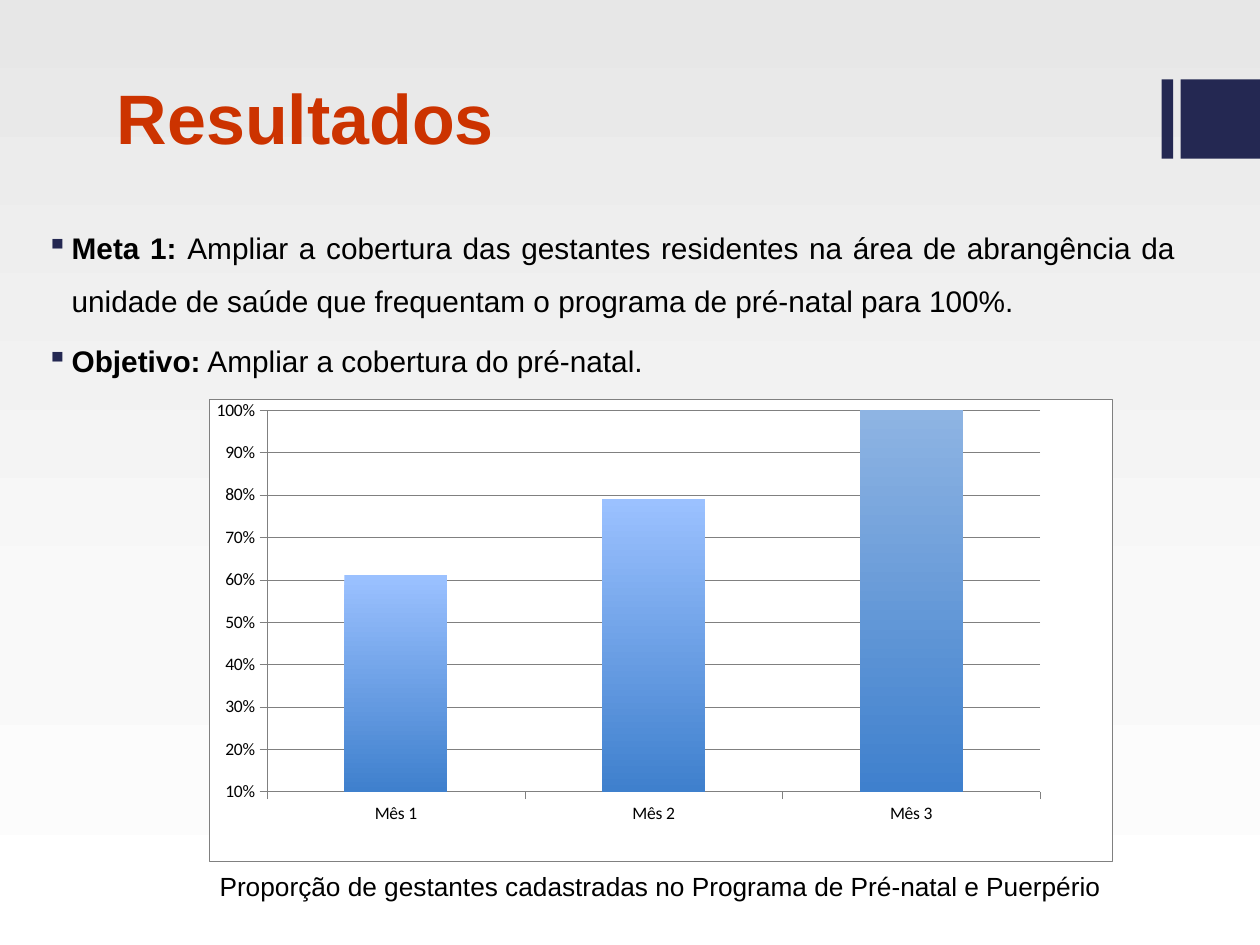
import copy
import pptx
import pptx.chart.data
import pptx.dml.color
import pptx.enum.chart
import pptx.enum.shapes
import pptx.enum.text
import pptx.oxml
import pptx.oxml.ns
import pptx.oxml.xmlchemy
import pptx.util

In, Pt = pptx.util.Inches, pptx.util.Pt
qn = pptx.oxml.ns.qn
new_element = pptx.oxml.xmlchemy.OxmlElement
ALIGN = pptx.enum.text.PP_ALIGN
ANCHOR = pptx.enum.text.MSO_ANCHOR

# Content: each paragraph is a list of (text, bold) runs
TITLE = [[("Resultados", True)]]
GOALS = [
    [("Meta 1: ", True),
     ("Ampliar a cobertura das gestantes residentes na área de abrangência da "
      "unidade de saúde que frequentam o programa de pré-natal para 100%.", False)],
    [("Objetivo:", True), (" Ampliar a cobertura do pré-natal.", False)],
]
CAPTION = [[("Proporção de gestantes cadastradas no Programa de Pré-natal e Puerpério", False)]]
COVERAGE = {"Mês 1": 0.61, "Mês 2": 0.79, "Mês 3": 1}

THEME = {
    "font": "Arial", "chart_font": "Calibri",
    "title": "CC3300", "text": "000000", "accent": "242852",
    "grid": "808080", "paper": "FFFFFF",
    "title_pt": 40, "body_pt": 17, "caption_pt": 15, "chart_pt": 10, "hair_pt": 0.25,
    "background": [(0, "E7E7E7"), (0.65, "F9F9F9"), (1, "FFFFFF")],
    "bar": [(0, "9BC1FF"), (1, "3F80CD")],
    "last_bar": [(0, "8EB4E3"), (1, "3F80CD")],
}

# Layout in inches
W, H = 10, 7.5
BAR_TOP, BAR_SIZE = 0.63, 0.63
BARS = [(9.22, 0.09), (W - BAR_SIZE, BAR_SIZE)]
TITLE_BOX = (0.83, 0.05, 8, 1.26)
GOALS_BOX = (0.22, 1.63, 9.21, 0.86)
CHART_BOX = (1.66, 3.17, 7.17, 3.67)
CAPTION_BOX = (1.54, 6.86, 7.4, 0.35)
PLOT = {"x": 0.064, "y": 0.023, "w": 0.856, "h": 0.826}  # shares of the chart


def rgb(name):
    return pptx.dml.color.RGBColor.from_string(THEME[name])


def gradient(fill, name):
    """Fill from top to bottom with the theme's colour stops."""
    fill.gradient()
    fill.gradient_angle = 270
    last = fill.gradient_stops[-1]._gs
    for _ in THEME[name][2:]:
        last.addnext(copy.deepcopy(last))
    for stop, (pos, color) in zip(fill.gradient_stops, THEME[name]):
        stop.position = pos
        stop.color.rgb = pptx.dml.color.RGBColor.from_string(color)


def hairline(line):
    line.color.rgb = rgb("grid")
    line.width = Pt(THEME["hair_pt"])


def add_text(slide, box, paras, size, color="text", align=ALIGN.LEFT, anchor=ANCHOR.TOP):
    tf = slide.shapes.add_textbox(*map(In, box)).text_frame
    tf.word_wrap, tf.vertical_anchor = True, anchor
    for i, runs in enumerate(paras):
        p = tf.paragraphs[0] if i == 0 else tf.add_paragraph()
        p.alignment = align
        for text, bold in runs:
            r = p.add_run()
            r.text = text
            r.font.name, r.font.size, r.font.bold = THEME["font"], Pt(THEME[size]), bold
            r.font.color.rgb = rgb(color)
    return tf


def add_bullet(p):
    p.line_spacing = 1.5
    p.space_before = Pt(0.2 * THEME["body_pt"])
    pPr = p._p.get_or_add_pPr()
    pPr.set("marL", str(In(0.25)))
    pPr.set("indent", str(In(-0.2)))
    color = new_element("a:buClr")
    color.append(new_element("a:srgbClr"))
    color[0].set("val", THEME["accent"])
    char = new_element("a:buChar")
    char.set("char", "▪")
    pPr.extend([color, char])


def area_style(border=""):
    return pptx.oxml.parse_xml(
        f'<c:spPr {pptx.oxml.ns.nsdecls("c", "a")}><a:solidFill>'
        f'<a:srgbClr val="{THEME["paper"]}"/></a:solidFill>{border}</c:spPr>')


def frame_chart(chart):
    """Paint the chart and plot areas and fix the inner plot position."""
    border = (f'<a:ln w="{int(Pt(THEME["hair_pt"]))}"><a:solidFill>'
              f'<a:srgbClr val="{THEME["grid"]}"/></a:solidFill></a:ln>')
    root = chart._chartSpace.find(qn("c:chart"))
    root.addnext(area_style(border))
    plot = root.find(qn("c:plotArea"))
    for old in plot.findall(qn("c:layout")):
        plot.remove(old)
    parts = '<c:layoutTarget val="inner"/><c:xMode val="edge"/><c:yMode val="edge"/>'
    parts += "".join(f'<c:{k} val="{v}"/>' for k, v in PLOT.items())
    plot.insert(0, pptx.oxml.parse_xml(
        f'<c:layout {pptx.oxml.ns.nsdecls("c")}><c:manualLayout>{parts}'
        '</c:manualLayout></c:layout>'))
    plot.append(area_style())


def add_coverage_chart(slide):
    data = pptx.chart.data.CategoryChartData(number_format="0%")
    data.categories = list(COVERAGE)
    data.add_series("Series 1", list(COVERAGE.values()))
    kind = pptx.enum.chart.XL_CHART_TYPE.COLUMN_CLUSTERED
    chart = slide.shapes.add_chart(kind, *map(In, CHART_BOX), data).chart
    chart.has_legend = chart.has_title = False
    frame_chart(chart)
    chart.font.name, chart.font.size = THEME["chart_font"], Pt(THEME["chart_pt"])
    chart.font.color.rgb = rgb("text")

    # Axes
    for axis in (chart.category_axis, chart.value_axis):
        axis.major_tick_mark = pptx.enum.chart.XL_TICK_MARK.OUTSIDE
        hairline(axis.format.line)
    axis = chart.value_axis
    axis.minimum_scale, axis.maximum_scale, axis.major_unit = 0.1, 1, 0.1
    axis.tick_labels.number_format = "0%"
    axis.tick_labels.number_format_is_linked = False
    hairline(axis.major_gridlines.format.line)

    # Columns
    plot = chart.plots[0]
    plot.gap_width, plot.vary_by_categories = 150, False
    series = plot.series[0]
    gradient(series.format.fill, "bar")
    gradient(series.points[len(COVERAGE) - 1].format.fill, "last_bar")


def main():
    prs = pptx.Presentation()
    prs.slide_width, prs.slide_height = In(W), In(H)
    slide = prs.slides.add_slide(prs.slide_layouts[6])
    gradient(slide.background.fill, "background")

    # Corner bars
    for left, width in BARS:
        sp = slide.shapes.add_shape(pptx.enum.shapes.MSO_SHAPE.RECTANGLE,
                                    In(left), In(BAR_TOP), In(width), In(BAR_SIZE))
        sp.shadow.inherit = False
        sp.fill.solid()
        sp.fill.fore_color.rgb = rgb("accent")
        sp.line.fill.background()

    # Title, goals, chart and caption
    add_text(slide, TITLE_BOX, TITLE, "title_pt", "title", anchor=ANCHOR.BOTTOM)
    goals = add_text(slide, GOALS_BOX, GOALS, "body_pt")
    goals.paragraphs[0].alignment = ALIGN.JUSTIFY
    for p in goals.paragraphs:
        add_bullet(p)
    add_coverage_chart(slide)
    add_text(slide, CAPTION_BOX, CAPTION, "caption_pt", align=ALIGN.CENTER)
    prs.save("out.pptx")


if __name__ == "__main__":
    main()
